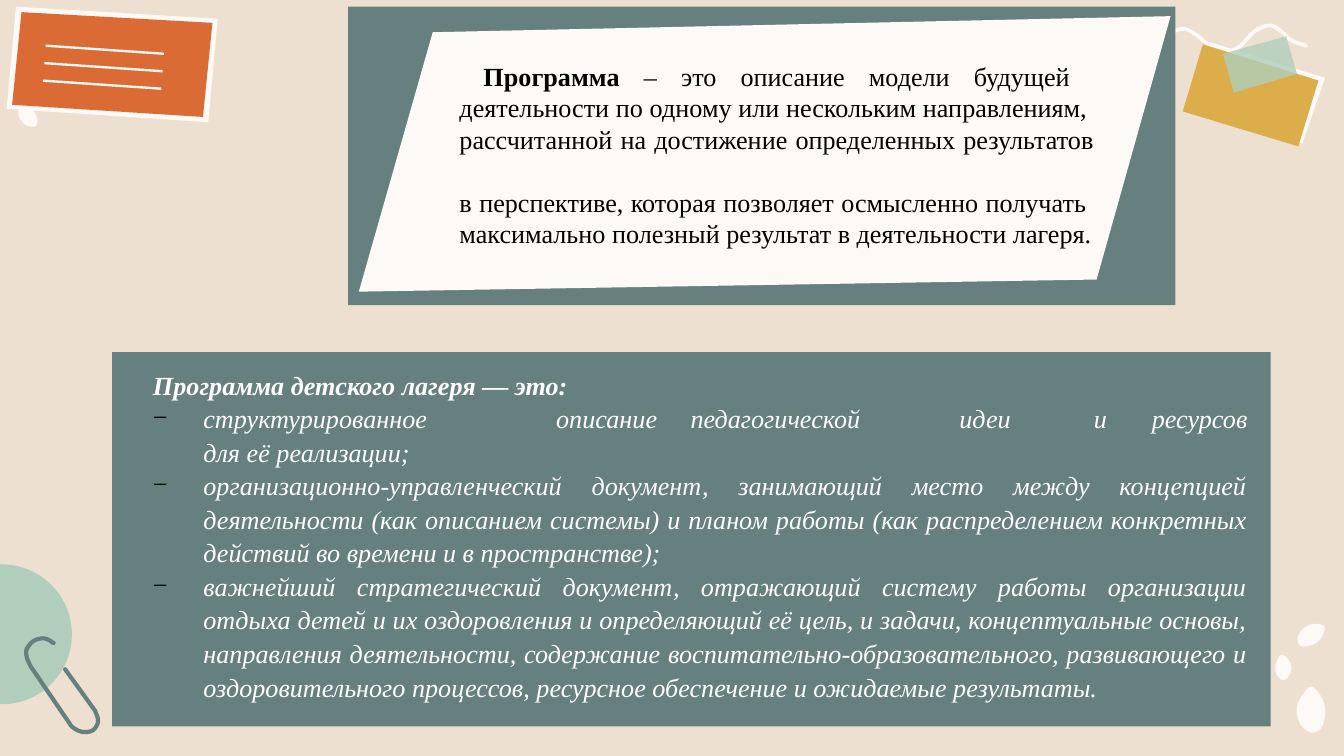
import dataclasses
import itertools

import lxml.etree
import pptx
import pptx.dml.color
import pptx.enum.shapes
import pptx.enum.text
import pptx.oxml.ns
import pptx.util

# Grid of 100 columns by 56.25 rows; every position is (column, row)
CELL = pptx.util.Inches(0.1)
COLUMNS, ROWS = 100, 56.25
CURVE_STEPS = 8
FONT = "Times New Roman"
COLORS = {
    "sand": "EEE0D1", "paper": "FCF9F6", "teal": "65807E", "mint": "B0CEBB",
    "ochre": "DBAE49", "orange": "DB6B34", "ink": "000000", "white": "FFFFFF",
}
Point = tuple[float, float]


@dataclasses.dataclass
class Outline:
    points: list[Point]
    color: str
    smooth: bool = False
    stroke: float = 0  # points; an open line when set
    opacity: int = 100


@dataclasses.dataclass
class Block:
    left: float
    top: float
    width: float
    height: float
    color: str = "teal"
    kind: str = "RECTANGLE"


@dataclasses.dataclass
class Passage:
    pieces: list[tuple[str, dict]]
    tab: float
    spacing: float = 1
    bullet: str = ""


def cells(value: float) -> int:
    return round(value * CELL)


def rgb(name: str) -> pptx.dml.color.RGBColor:
    return pptx.dml.color.RGBColor.from_string(COLORS[name])


def add_tag(parent, tag: str, **values):
    return lxml.etree.SubElement(parent, pptx.oxml.ns.qn(tag), values)


def paint(shape, color: str) -> None:
    shape.shadow.inherit = False
    shape.fill.solid()
    shape.fill.fore_color.rgb = rgb(color)
    shape.line.fill.background()


def curve_through(points: list[Point], closed: bool) -> list[Point]:
    """Sample a Catmull-Rom curve through the points."""
    ends = ([points[-1]], points[:2]) if closed else ([points[0]], [points[-1]])
    guide = ends[0] + points + ends[1]
    samples = [
        tuple(
            b + 0.5 * t * (c - a + t * (2 * a - 5 * b + 4 * c - d + t * (3 * (b - c) + d - a)))
            for a, b, c, d in zip(*quad)
        )
        for quad in zip(guide, guide[1:], guide[2:], guide[3:])
        for t in (step / CURVE_STEPS for step in range(CURVE_STEPS))
    ]
    return samples if closed else samples + [points[-1]]


def draw_outline(slide, outline: Outline) -> None:
    closed = not outline.stroke
    points = curve_through(outline.points, closed) if outline.smooth else outline.points
    spots = [(cells(x), cells(y)) for x, y in points]
    builder = slide.shapes.build_freeform(*spots[0], scale=1.0)
    builder.add_line_segments(spots[1:], close=closed)
    shape = builder.convert_to_shape()
    paint(shape, outline.color)
    if outline.stroke:
        shape.fill.background()
        shape.line.color.rgb = rgb(outline.color)
        shape.line.width = pptx.util.Pt(outline.stroke)
        shape.line._get_or_add_ln().set("cap", "rnd")
    if outline.opacity < 100:
        add_tag(shape.fill.fore_color._xFill[0], "a:alpha", val=str(outline.opacity * 1000))


def draw_block(slide, block: Block) -> None:
    kind = pptx.enum.shapes.MSO_SHAPE[block.kind]
    area = map(cells, (block.left, block.top, block.width, block.height))
    paint(slide.shapes.add_shape(kind, *area), block.color)


def draw_rule(slide, start: Point, end: Point) -> None:
    rule = slide.shapes.add_connector(
        pptx.enum.shapes.MSO_CONNECTOR.STRAIGHT, *map(cells, start + end))
    rule.line.color.rgb = rgb("paper")
    rule.line.width = pptx.util.Pt(1.25)
    add_tag(rule._element.spPr, "a:effectLst")


def write_passage(paragraph, passage: Passage, color: str) -> None:
    layout = {"alignment": pptx.enum.text.PP_ALIGN.JUSTIFY, "line_spacing": passage.spacing}
    for name, value in layout.items():
        setattr(paragraph, name, value)
    properties = paragraph._p.get_or_add_pPr()
    properties.set("defTabSz", str(cells(10)))
    if passage.bullet:
        properties.set("marL", str(cells(3.75)))
        properties.set("indent", str(-cells(3.75)))
        add_tag(add_tag(properties, "a:buClr"), "a:srgbClr", val=COLORS["ink"])
        add_tag(properties, "a:buFont", typeface=FONT)
        add_tag(properties, "a:buChar", char=passage.bullet)
    stops = add_tag(properties, "a:tabLst")
    add_tag(stops, "a:tab", pos=str(cells(passage.tab)), algn="l")
    for text, style in passage.pieces:
        for number, line in enumerate(text.split("\n")):
            if number:
                paragraph.add_line_break()
            run = paragraph.add_run()
            run.text = line
            for name, value in ({"name": FONT, "size": pptx.util.Pt(14)} | style).items():
                setattr(run.font, name, value)
            run.font.color.rgb = rgb(color)
    for line_break in paragraph._p.findall(pptx.oxml.ns.qn("a:br")):
        add_tag(line_break, "a:rPr", sz="1400")


def write_text(slide, area: tuple, passages: list[Passage], color: str) -> None:
    frame = slide.shapes.add_textbox(*map(cells, area)).text_frame
    frame.word_wrap = True
    frame.auto_size = pptx.enum.text.MSO_AUTO_SIZE.SHAPE_TO_FIT_TEXT
    for number, passage in enumerate(passages):
        paragraph = frame.add_paragraph() if number else frame.paragraphs[0]
        write_passage(paragraph, passage, color)


# Decoration behind the panels
SQUIGGLE = Outline([(86.6, 3.2), (87.3, 2.4), (88.1, 2.15), (88.95, 2.55), (90.2, 3.5),
                    (91.4, 3.8), (92.3, 3.4), (93.4, 2.3), (94.5, 1.9), (95.3, 2.3),
                    (96.1, 3), (97.2, 3.4)], "paper", True, 2)
PETALS = [
    Outline(points, "paper", True) for points in (
        [(1.5, 7.8), (1.4, 8.6), (1.9, 9.3), (2.6, 9.4), (2.8, 9.0), (2.6, 8.4), (2.2, 7.9)],
        [(98.4, 46.5), (97.6, 46.45), (96.9, 46.85), (96.55, 47.5), (96.75, 48.05),
         (97.5, 48.05), (98.2, 47.6), (98.55, 46.9)],
        [(95.4, 48.7), (95.1, 49), (94.9, 49.6), (95, 50.2), (95.5, 50.6), (95.9, 50.3),
         (96.1, 49.7), (95.9, 49.1)],
        [(97.6, 51.1), (97, 51.6), (96.5, 52.6), (96.7, 53.8), (97.5, 54.5), (98.3, 54.2),
         (98.6, 53.1), (98.4, 52)],
    )
]
PANELS = [Block(8.35, 26.2, 86.2, 27.85), Block(25.9, 0.5, 61.55, 22.2)]

# Taped note, circle, paper clip and the sheet under the definition
TAPED_NOTE = [
    Outline([(89.9, 3.1), (88.3, 8.2), (96.9, 10.7), (98.6, 5.8)], "paper"),
    Outline([(89.5, 3.3), (88, 8.3), (96.6, 10.9), (98.1, 6)], "ochre"),
    Outline([(91, 4), (91.8, 6.9), (96.5, 5.5), (95.7, 2.7)], "mint", opacity=80),
]
CIRCLE = Block(-5.05, 42, 10.4, 10.4, "mint", "OVAL")
CLIP = Outline([(4, 47.85), (3.3, 47.5), (2.5, 47.7), (2, 48.3), (2, 48.9), (2.3, 49.6),
                (2.6, 50.04), (5, 53.56), (5.4, 54.1), (6.1, 54.45), (6.9, 54.35),
                (7.3, 53.7), (7.1, 52.95), (6.8, 52.5), (4.85, 49.8)], "teal", True, 2.25)
SHEET = Outline([(26.7, 21.7), (81.6, 20.8), (87.1, 1.2), (32.2, 2.4)], "paper")

# Orange card with three ruled lines
CARD = [
    Outline([(1.2, 0.5), (0.5, 8.1), (15.5, 9.1), (16.2, 1.4)], "paper"),
    Outline([(1.6, 0.9), (0.9, 7.8), (15.1, 8.7), (15.8, 1.7)], "orange"),
]

DEFINITION = [Passage([
    (" Программа ", {"bold": True}),
    ("– это описание модели будущей  деятельности по одному или нескольким направлениям, \n"
     "рассчитанной на достижение определенных результатов \n"
     "в перспективе, которая позволяет осмысленно получать \n"
     "максимально полезный результат в деятельности лагеря.", {}),
], tab=2.9)]
HEADING = "Программа детского лагеря — это:"
MEANINGS = [
    "структурированное\tописание\tпедагогической\tидеи\tи ресурсов для её реализации;",
    "организационно-управленческий документ, занимающий место между концепцией деятельности "
    "(как описанием системы) и планом работы (как распределением конкретных действий "
    "во времени и в пространстве);",
    "важнейший стратегический документ, отражающий систему работы организации отдыха детей "
    "и их оздоровления и определяющий её цель, и задачи, концептуальные основы, направления "
    "деятельности, содержание воспитательно-образовательного, развивающего и "
    "оздоровительного процессов, ресурсное обеспечение и ожидаемые результаты.",
]


def main() -> None:
    deck = pptx.Presentation()
    deck.slide_width, deck.slide_height = cells(COLUMNS), cells(ROWS)
    slide = deck.slides.add_slide(deck.slide_layouts[6])
    slide.background.fill.solid()
    slide.background.fill.fore_color.rgb = rgb("sand")

    for outline in [SQUIGGLE, *PETALS]:
        draw_outline(slide, outline)
    for panel in PANELS:
        draw_block(slide, panel)
    for outline in TAPED_NOTE:
        draw_outline(slide, outline)
    draw_block(slide, CIRCLE)
    for outline in itertools.chain([CLIP, SHEET], CARD):
        draw_outline(slide, outline)
    for row in range(3):
        left, top = 3.4 - 0.1 * row, 3.4 + 1.3 * row
        draw_rule(slide, (left, top), (left + 8.8, top + 0.6))

    write_text(slide, (33.2, 4, 49.2, 15.1), DEFINITION, "ink")
    camp_program = [Passage([(HEADING, {"bold": True, "italic": True})], 6.9, 1.07)]
    camp_program += [Passage([(text, {"italic": True})], 6.9, 1.07, "−") for text in MEANINGS]
    write_text(slide, (10.4, 26.8, 83.4, 26.2), camp_program, "white")
    deck.save("out.pptx")


if __name__ == "__main__":
    main()
